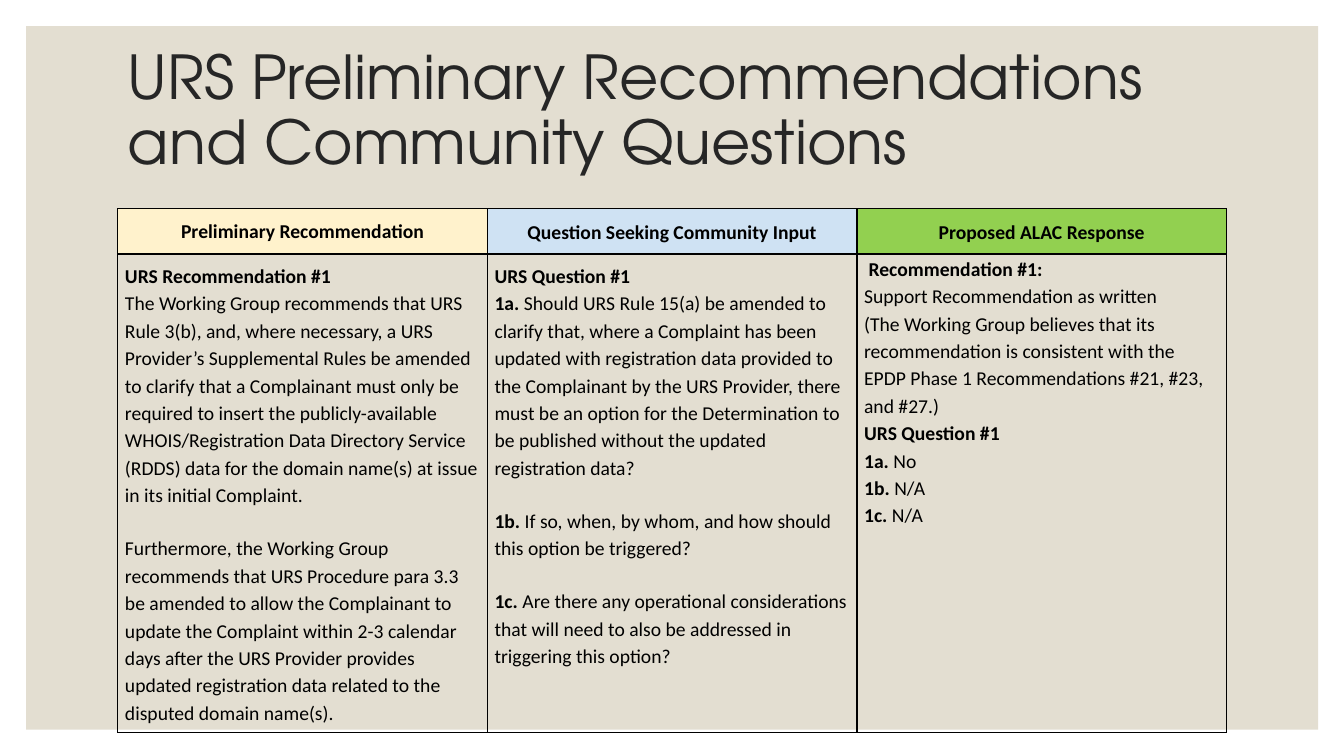
from lxml.etree import SubElement
from pptx import Presentation
from pptx.dml.color import RGBColor
from pptx.enum.shapes import MSO_SHAPE
from pptx.enum.text import MSO_ANCHOR, MSO_AUTO_SIZE, PP_ALIGN
from pptx.oxml.ns import qn
from pptx.util import Cm, Pt

HUES = {
    "panel": "E3DED1",
    "title": "262626",
    "text": "000000",
    "cream": "FFF2CC",
    "blue": "CFE2F3",
    "green": "92D050",
}
PAD = 0.18
GAP = 18.3

HEADS = [
    ("Preliminary Recommendation", "cream", MSO_ANCHOR.TOP, PAD),
    ("Question Seeking Community Input", "blue", MSO_ANCHOR.MIDDLE, PAD),
    ("Proposed ALAC Response", "green", MSO_ANCHOR.MIDDLE, 0),
]

BODY = [
    [
        ("URS Recommendation #1", "", 0),
        ("", "The Working Group recommends that URS Rule 3(b), and, where necessary, "
         "a URS Provider’s Supplemental Rules be amended to clarify that a Complainant "
         "must only be required to insert the publicly-available WHOIS/Registration Data "
         "Directory Service (RDDS) data for the domain name(s) at issue in its initial "
         "Complaint.", 0),
        ("", "Furthermore, the Working Group recommends that URS Procedure para 3.3 be "
         "amended to allow the Complainant to update the Complaint within 2-3 calendar "
         "days after the URS Provider provides updated registration data related to the "
         "disputed domain name(s).", GAP),
    ],
    [
        ("URS Question #1", "", 0),
        ("1a. ", "Should URS Rule 15(a) be amended to clarify that, where a Complaint has "
         "been updated with registration data provided to the Complainant by the URS "
         "Provider, there must be an option for the Determination to be published without "
         "the updated registration data?", 0),
        ("1b.", " If so, when, by whom, and how should this option be triggered?", GAP),
        ("1c. ", "Are there any operational considerations that will need to also be "
         "addressed in triggering this option?", GAP),
    ],
    [
        (" Recommendation #1:", "", 0),
        ("", "Support Recommendation as written", 0),
        ("", "(The Working Group believes that its recommendation is consistent with the "
         "EPDP Phase 1 Recommendations #21, #23, and #27.)", 0),
        ("URS Question #1", "", 0),
        ("1a. ", "No", 0),
        ("1b. ", "N/A", 0),
        ("1c. ", "N/A", 0),
    ],
]


def style(para, face, size, hue):
    para.font.name = face
    para.font.size = Pt(size)
    para.font.color.rgb = RGBColor.from_string(HUES[hue])


def add_panel(slide, left, top, width, height):
    panel = slide.shapes.add_shape(MSO_SHAPE.RECTANGLE, left, top, width, height)
    panel.shadow.inherit = False
    panel.fill.solid()
    panel.fill.fore_color.rgb = RGBColor.from_string(HUES["panel"])
    panel.line.fill.background()
    node = panel._element
    node.getparent().insert(2, node)


def add_title(slide, left, top, width, height):
    title = slide.shapes.title
    title.left, title.top, title.width, title.height = left, top, width, height
    frame = title.text_frame
    frame.text = "URS Preliminary Recommendations and Community Questions"
    frame.word_wrap = True
    frame.auto_size = MSO_AUTO_SIZE.NONE
    frame.vertical_anchor = MSO_ANCHOR.MIDDLE
    para = frame.paragraphs[0]
    para.alignment = PP_ALIGN.LEFT
    para.line_spacing = 0.9
    style(para, "TeX Gyre Adventor", 43.2, "title")


def add_edges(cell):
    props = cell._tc.get_or_add_tcPr()
    for spot, side in enumerate(("lnL", "lnR", "lnT", "lnB")):
        line = SubElement(props, qn("a:" + side), w=str(Pt(1)))
        fill = SubElement(line, qn("a:solidFill"))
        SubElement(fill, qn("a:srgbClr"), val=HUES["text"])
        props.insert(spot, line)


def fill_cell(cell, paras, pad, hue=None, anchor=MSO_ANCHOR.TOP, align=PP_ALIGN.LEFT):
    cell.margin_left = cell.margin_right = Cm(PAD)
    cell.margin_top = cell.margin_bottom = Cm(pad)
    cell.vertical_anchor = anchor
    if hue:
        cell.fill.solid()
        cell.fill.fore_color.rgb = RGBColor.from_string(HUES[hue])
    else:
        cell.fill.background()
    add_edges(cell)
    frame = cell.text_frame
    for index, (strong, plain, gap) in enumerate(paras):
        para = frame.add_paragraph() if index else frame.paragraphs[0]
        para.alignment = align
        para.line_spacing = 1.15
        para.space_before = Pt(gap)
        style(para, "Calibri", 14, "text")
        if strong and plain:
            para.add_run().text = strong
            para.runs[0].font.bold = True
            para.add_run().text = plain
            para.runs[1].font.bold = False
        else:
            para.add_run().text = strong or plain
            para.font.bold = bool(strong)


def add_grid(slide, left, top, width, height):
    table = slide.shapes.add_table(2, len(HEADS), left, top, width, height).table
    table.first_row = table.horz_banding = False
    table.rows[0].height = Cm(1.14)
    table.rows[1].height = height - Cm(1.14)
    for col, ((text, hue, anchor, pad), paras) in enumerate(zip(HEADS, BODY)):
        table.columns[col].width = int(width / len(HEADS))
        fill_cell(table.cell(0, col), [(text, "", 0)], pad, hue, anchor, PP_ALIGN.CENTER)
        fill_cell(table.cell(1, col), paras, pad)


def main():
    deck = Presentation()
    deck.slide_width, deck.slide_height = Cm(33.87), Cm(19.05)
    slide = deck.slides.add_slide(deck.slide_layouts[5])
    add_panel(slide, Cm(0.66), Cm(0.66), Cm(32.56), Cm(17.73))
    add_title(slide, Cm(2.97), Cm(1.3), Cm(27.94), Cm(3.05))
    add_grid(slide, Cm(2.97), Cm(5.26), Cm(27.94), Cm(12.42))
    deck.save("out.pptx")


if __name__ == "__main__":
    main()
